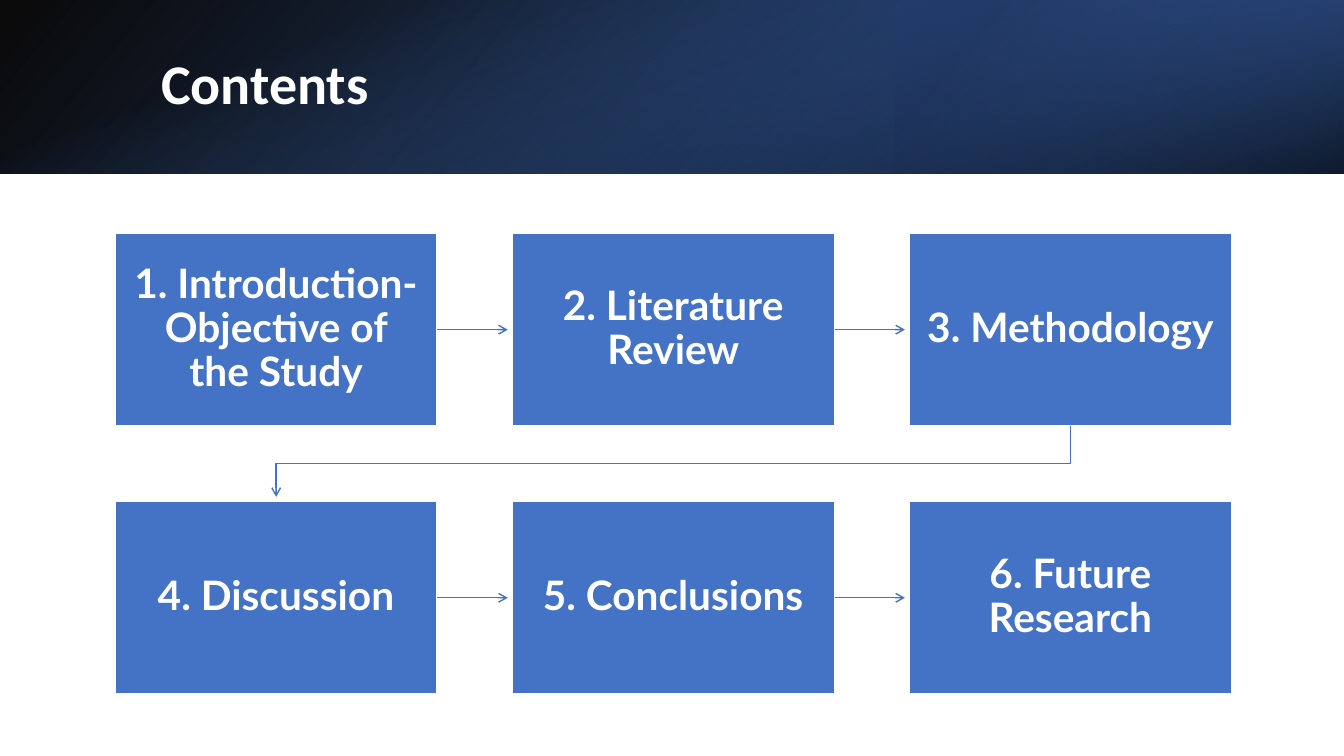
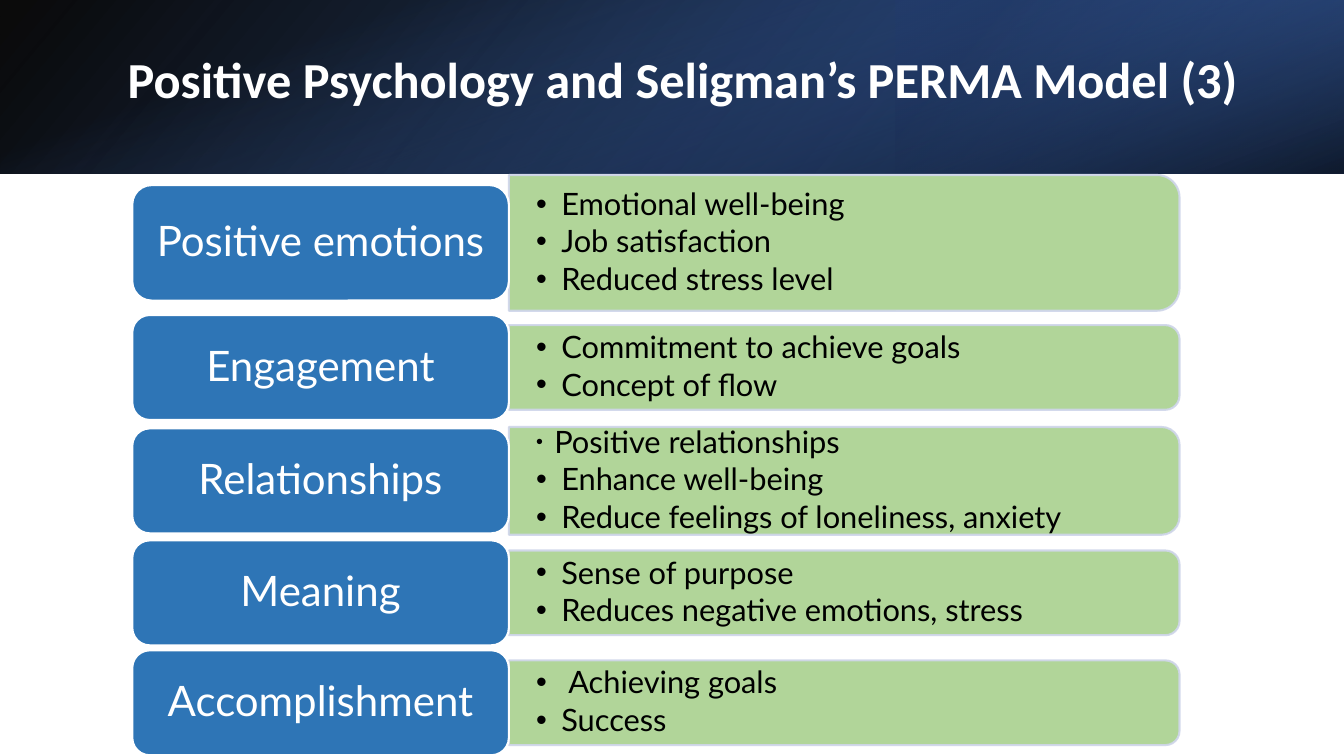
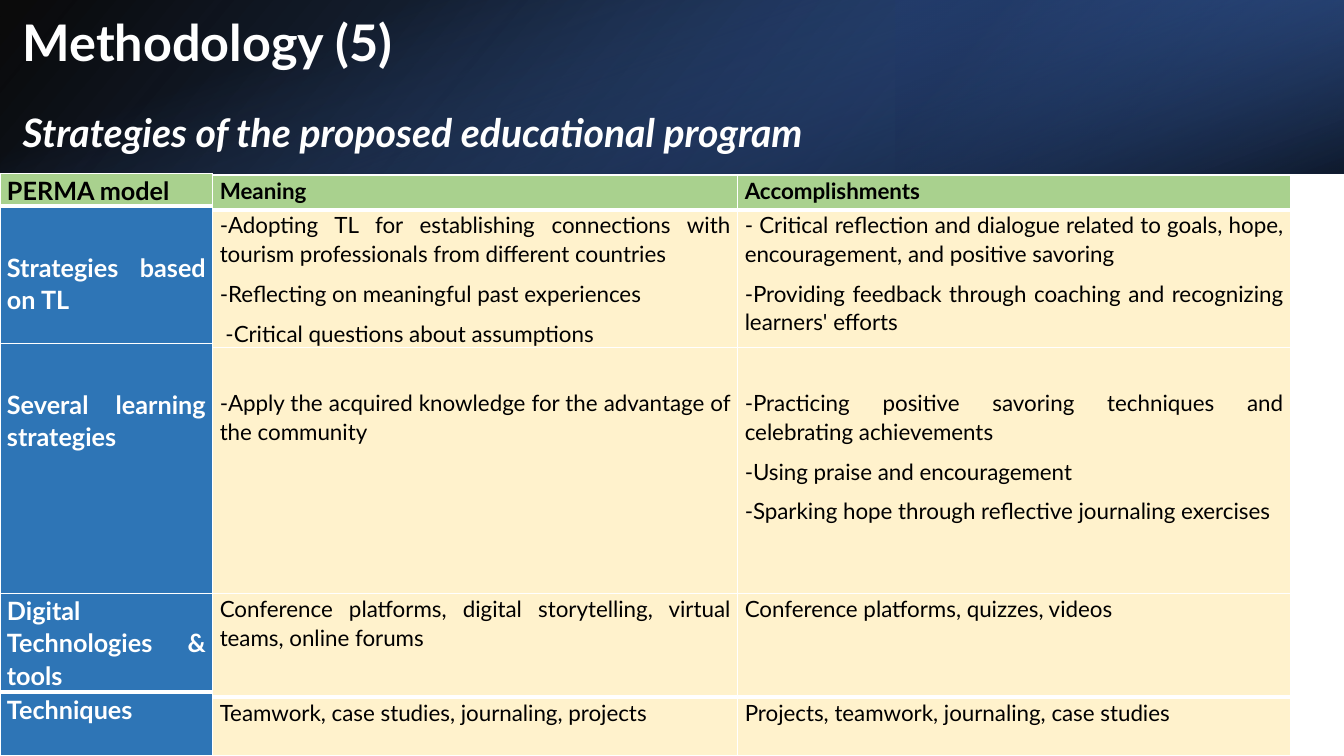
from collections import namedtuple
from itertools import product

from lxml.etree import SubElement
from pptx import Presentation
from pptx.dml.color import RGBColor
from pptx.enum.shapes import MSO_CONNECTOR as LINK, MSO_SHAPE as SHAPE
from pptx.enum.text import MSO_ANCHOR as ANCHOR, MSO_AUTO_SIZE as AUTO, PP_ALIGN as ALIGN
from pptx.oxml.ns import qn
from pptx.util import Pt

WHITE, BLACK = "FFFFFF", "000000"
BLUE, STEEL, GREEN, CREAM, PALE = "4472C4", "2E75B6", "A9D18E", "FFF2CC", "CFD5EA"
WIDTH, HEIGHT, BAND = 960, 540, 124

Bullet = namedtuple("Bullet", "text indent size", defaults=(18, 100))
Gradient = namedtuple("Gradient", "box rotation flipped angle stops")

BAND_LAYERS = [
    Gradient((0, 0, WIDTH, BAND), 0, True, 140, [(0, BLACK, 96), (1, "2F5597", 100)]),
    Gradient((640, 0, 320, BAND), 180, True, 320, [(0.19, "203864", 68), (1, BLUE, 79)]),
    Gradient(((WIDTH - BAND) / 2, (BAND - WIDTH) / 2, BAND, WIDTH), 90, False, 340,
             [(0.23, BLUE, 0), (0.99, BLACK, 74)]),
]


def color(value):
    return RGBColor.from_string(value)


def points(*values):
    return [Pt(value) for value in values]


def fade(shape, *opacities):
    for tint, opacity in zip(list(shape._element.spPr.iter(qn("a:srgbClr"))), opacities):
        SubElement(tint, qn("a:alpha"), val=str(opacity * 1000))


class Deck:
    font = "Lato"

    def __init__(self):
        self.file = Presentation()
        self.file.slide_width, self.file.slide_height = points(WIDTH, HEIGHT)
        self.slide = None

    def set_text(self, frame, text, size, ink, bold=False, align=ALIGN.LEFT,
                 font=None, spacing=0.9, after=0):
        frame.text = text
        for paragraph in frame.paragraphs:
            paragraph.alignment = align
            paragraph.line_spacing = spacing
            paragraph.space_before = Pt(0)
            paragraph.space_after = Pt(after)
            style = paragraph.font
            style.name, style.size, style.bold = font or self.font, Pt(size), bold
            style.color.rgb = color(ink)
        return frame.paragraphs

    def fit(self, frame, side, end):
        frame.word_wrap = True
        frame.auto_size = AUTO.NONE
        frame.vertical_anchor = ANCHOR.MIDDLE
        frame.margin_left = frame.margin_right = Pt(side)
        frame.margin_top = frame.margin_bottom = Pt(end)

    def new_slide(self, title, box, size, font="Calibri"):
        self.slide = self.file.slides.add_slide(self.file.slide_layouts[5])
        for layer in BAND_LAYERS:
            self.gradient(layer)
        heading = self.slide.shapes.title
        heading.left, heading.top, heading.width, heading.height = points(*box)
        self.slide.shapes._spTree.append(heading._element)
        self.fit(heading.text_frame, 7.2, 3.6)
        return self.set_text(heading.text_frame, title, size, WHITE, True, font=font)

    def gradient(self, layer):
        shape = self.slide.shapes.add_shape(SHAPE.RECTANGLE, *points(*layer.box))
        shape.shadow.inherit = False
        shape.line.fill.background()
        shape.rotation = layer.rotation
        if layer.flipped:
            shape._element.spPr.find(qn("a:xfrm")).set("flipH", "1")
        shape.fill.gradient()
        shape.fill.gradient_angle = 360 - layer.angle
        for stop, (position, tint, _) in zip(shape.fill.gradient_stops, layer.stops):
            stop.position = position
            stop.color.rgb = color(tint)
        fade(shape, *[opacity for _, _, opacity in layer.stops])

    def block(self, kind, box, fill, outline=WHITE):
        shape = self.slide.shapes.add_shape(kind, *points(*box))
        shape.shadow.inherit = False
        shape.fill.solid()
        shape.fill.fore_color.rgb = color(fill)
        shape.line.color.rgb = color(outline)
        shape.line.width = Pt(1.5)
        return shape

    def label(self, kind, box, fill, text, size, bold=False, side=12, end=6):
        shape = self.block(kind, box, fill)
        self.fit(shape.text_frame, side, end)
        self.set_text(shape.text_frame, text, size, WHITE, bold, ALIGN.CENTER)
        return shape

    def arrow_style(self, line_shape):
        line_shape.line.color.rgb = color(BLUE)
        line_shape.line.width = Pt(1)
        outline = line_shape._element.spPr.find(qn("a:ln"))
        SubElement(outline, qn("a:tailEnd"), type="arrow")

    def arrow(self, source, x1, x2, y):
        link = self.slide.shapes.add_connector(LINK.STRAIGHT, *points(x1, y, x2, y))
        link.begin_connect(source, 3)
        self.arrow_style(link)
        SubElement(link._element.spPr, qn("a:effectLst"))

    def bent_arrow(self, start, *corners):
        builder = self.slide.shapes.build_freeform(*points(*start), scale=1.0)
        builder.add_line_segments([points(*corner) for corner in corners], close=False)
        route = builder.convert_to_shape()
        route.shadow.inherit = False
        route.fill.background()
        self.arrow_style(route)

    def side_panel(self, left, middle, width, height, bullets):
        panel = self.block(SHAPE.ROUND_2_SAME_RECTANGLE,
                           (left + (width - height) / 2, middle - width / 2, height, width),
                           GREEN, PALE)
        panel.rotation = 90
        fade(panel, 90, 90)
        box = points(left, middle - height / 2, width, height)
        frame = self.slide.shapes.add_textbox(*box).text_frame
        self.fit(frame, 19.5, 0)
        text = "\n".join(bullet.text for bullet in bullets)
        for paragraph, bullet in zip(self.set_text(frame, text, 22, BLACK, after=3), bullets):
            self.bullet(paragraph, bullet)

    def bullet(self, paragraph, bullet):
        properties = paragraph._p.get_or_add_pPr()
        properties.set("marL", str(Pt(bullet.indent)))
        properties.set("indent", str(-Pt(bullet.indent)))
        defaults = properties.find(qn("a:defRPr"))
        for tag, name, value in [("a:buSzPct", "val", str(bullet.size * 1000)),
                                 ("a:buFont", "typeface", "Arial"),
                                 ("a:buChar", "char", "•")]:
            mark = SubElement(properties, qn(tag))
            mark.set(name, value)
            defaults.addprevious(mark)

    def table(self, left, top, widths, heights, rows, size, fill, ink,
              bold=False, header=False, pads=(0, 0, 0)):
        box = points(left, top, sum(widths), sum(heights))
        grid = self.slide.shapes.add_table(len(rows), len(widths), *box).table
        grid.first_row = grid.horz_banding = False
        for column, width in zip(grid.columns, widths):
            column.width = Pt(width)
        for row, height in zip(grid.rows, heights):
            row.height = Pt(height)
        for r, c in product(range(len(rows)), range(len(widths))):
            cell = grid.cell(r, c)
            heading = header and r == 0
            cell.margin_left = cell.margin_right = Pt(5)
            cell.margin_top, cell.margin_bottom = points(pads[r], 0)
            cell.fill.solid()
            cell.fill.fore_color.rgb = color(GREEN if heading else fill)
            self.set_text(cell.text_frame, rows[r][c], size, BLACK if heading else ink,
                          bold or heading, ALIGN.JUSTIFY, spacing=1.07, after=8)
            self.borders(cell, r == 0)

    def borders(self, cell, first):
        sides = [("a:lnL", 1), ("a:lnR", 1), ("a:lnB", 3 if first else 1)]
        if first:
            sides.insert(2, ("a:lnT", 1))
        properties = cell._tc.get_or_add_tcPr()
        for place, (tag, weight) in enumerate(sides):
            edge = SubElement(properties, qn(tag), w=str(Pt(weight)))
            SubElement(SubElement(edge, qn("a:solidFill")), qn("a:srgbClr"), val=WHITE)
            properties.insert(place, edge)


def contents(deck):
    deck.new_slide("Contents", (108, 27.5, 790, 69), 40)
    chapters = ["1. Introduction-Objective of the Study", "2. Literature Review",
                "3. Methodology", "4. Discussion", "5. Conclusions", "6. Future Research"]
    left, top, width, height, step_x, step_y, gap = 82, 166.5, 230.5, 138, 283.7, 191.5, 3
    for number, chapter in enumerate(chapters):
        row, column = divmod(number, 3)
        x, y = left + column * step_x, top + row * step_y
        box = deck.label(SHAPE.RECTANGLE, (x, y, width, height), BLUE, chapter, 29, True,
                         11.5, 11.5)
        if column < 2:
            deck.arrow(box, x + width, x + step_x - gap, y + height / 2)
    first_x = left + width / 2
    last_x = first_x + 2 * step_x
    turn_y = top + (height + step_y) / 2
    deck.bent_arrow((last_x, top + height), (last_x, turn_y), (first_x, turn_y),
                    (first_x, top + step_y - gap))


def perma_model(deck):
    deck.new_slide("Positive Psychology and Seligman’s PERMA Model (3)", (84, 31, 822, 56), 36)
    elements = [
        ("Positive emotions", 173.5, 82.5, 97,
         [Bullet("Emotional well-being"), Bullet("Job satisfaction"),
          Bullet("Reduced stress level")]),
        ("Engagement", 262.5, 75, 60.5,
         [Bullet("Commitment to achieve goals"), Bullet("Concept of flow")]),
        ("Relationships", 343.5, 75, 77,
         [Bullet("Positive relationships", 13, 64), Bullet("Enhance well-being"),
          Bullet("Reduce feelings of loneliness, anxiety")]),
        ("Meaning", 423.5, 75, 60.5,
         [Bullet("Sense of purpose"), Bullet("Reduces negative emotions, stress")]),
        ("Accomplishment", 502, 75, 60.5,
         [Bullet("Achieving goals", 23), Bullet("Success")]),
    ]
    left, label_width, panel_width = 94.5, 269, 479
    for name, middle, label_height, panel_height, bullets in elements:
        deck.side_panel(left + label_width, middle, panel_width, panel_height, bullets)
        deck.label(SHAPE.ROUNDED_RECTANGLE,
                   (left, middle - label_height / 2, label_width, label_height),
                   STEEL, name, 30)


def methodology(deck):
    _, subtitle = deck.new_slide(
        "Methodology (5)\nStrategies of the proposed educational program",
        (9, 0, 790, BAND), 36, deck.font)
    subtitle.font.size = Pt(28)
    subtitle.font.italic = True
    subtitle.space_before = Pt(29.5)

    names_width, columns, lower_top = 152, [375, 395], 424
    deck.table(0, 124, [names_width], [22.5, 98, 181.5],
               [["PERMA model"], ["Strategies based on TL"], ["Several learning strategies"]],
               18, STEEL, WHITE, bold=True, header=True, pads=(0, 31.5, 31.5))
    deck.table(0, lower_top, [names_width], [70.5, 45.5],
               [["Digital Technologies & tools"], ["Techniques"]],
               18, STEEL, WHITE, bold=True)
    deck.table(names_width, 125.5, columns, [24.5, 98, 184], [
        ["Meaning", "Accomplishments"],
        ["-Adopting TL for establishing connections with tourism professionals from "
         "different countries\n-Reflecting on meaningful past experiences\n"
         " -Critical questions about assumptions",
         "- Critical reflection and dialogue related to goals, hope, encouragement, and "
         "positive savoring\n-Providing feedback through coaching and recognizing "
         "learners' efforts"],
        ["-Apply the acquired knowledge for the advantage of the community",
         "-Practicing positive savoring techniques and celebrating achievements\n"
         "-Using praise and encouragement\n"
         "-Sparking hope through reflective journaling exercises"],
    ], 16, CREAM, BLACK, header=True, pads=(0, 0, 29))
    deck.table(names_width, lower_top, columns, [74, 42], [
        ["Conference platforms, digital storytelling, virtual teams, online forums",
         "Conference platforms, quizzes, videos"],
        ["Teamwork, case studies, journaling, projects",
         "Projects, teamwork, journaling, case studies"],
    ], 16, CREAM, BLACK)


def main():
    deck = Deck()
    contents(deck)
    perma_model(deck)
    methodology(deck)
    deck.file.save("out.pptx")


if __name__ == "__main__":
    main()
